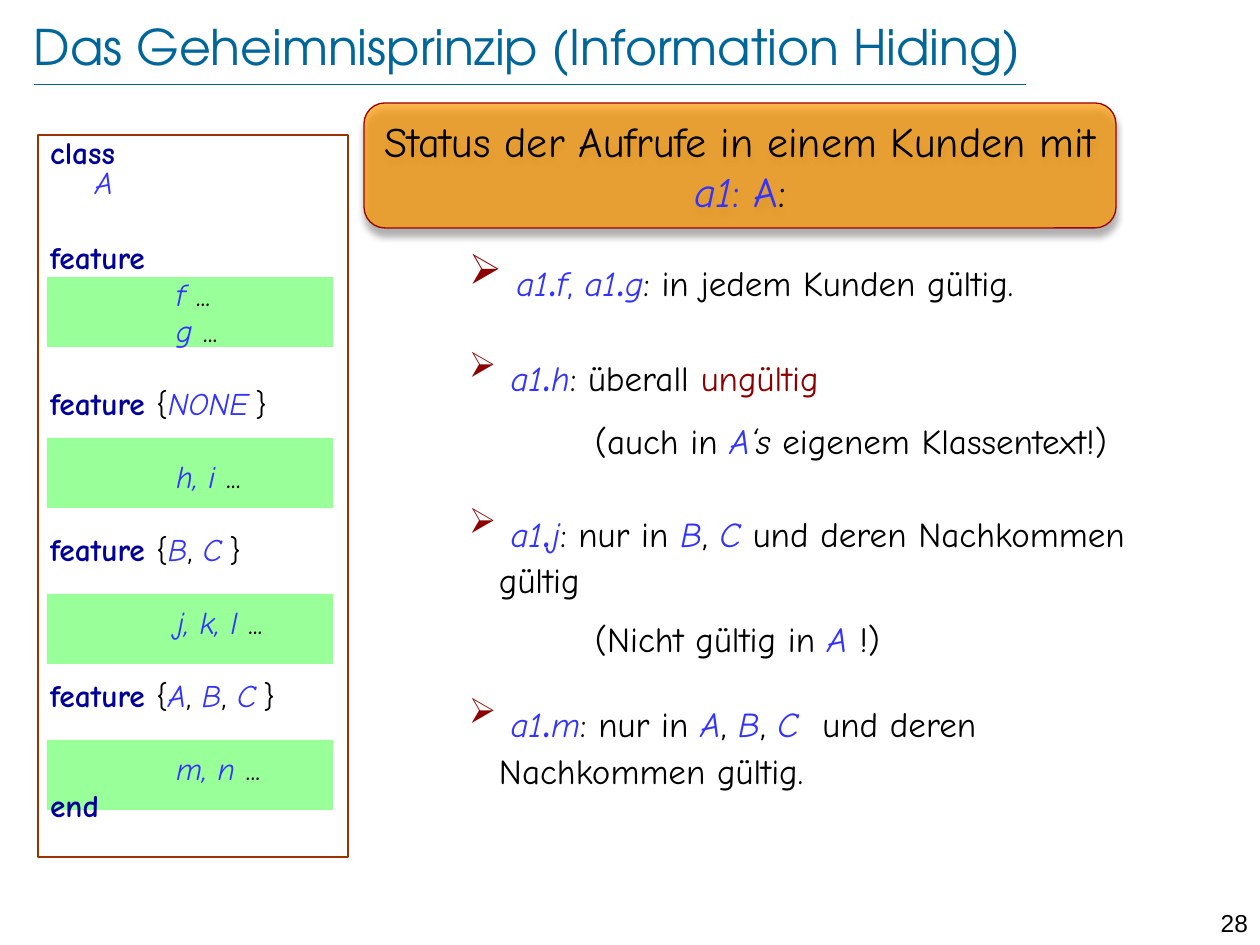
import pptx
import pptx.util
import pptx.dml.color
import pptx.enum.shapes
import pptx.enum.text
import pptx.oxml
import pptx.oxml.ns

PX = 914400 // 126
HUES = dict(ink="000000", blue="3333FF", key="000099", red="8B0000", title="006699",
            frame="993300", green="99FF99", gold="FF9900", edge="990000")
STYLES = {
    "n": {},
    "k": dict(hue="key", bold=True),
    "b": dict(hue="blue", italic=True),
    "u": dict(hue="blue"),
    "d": dict(hue="blue", size=32),
    "r": dict(hue="red"),
    "i": dict(italic=True),
    "t": dict(size=12),
    "L": dict(size=24),
}
KIND = pptx.enum.shapes.MSO_SHAPE
ALIGN = pptx.enum.text.PP_ALIGN
ANCHOR = pptx.enum.text.MSO_ANCHOR


def px(*nums):
    """Turn pixels into EMU."""
    return [n * PX for n in nums]


def rgb(name):
    """Look up a colour."""
    return pptx.dml.color.RGBColor.from_string(HUES[name])


def xml(tag, **atts):
    """Make a drawing element with attributes."""
    node = pptx.oxml.parse_xml(f'<a:{tag} {pptx.oxml.ns.nsdecls("a")}/>')
    for name, val in atts.items():
        node.set(name, str(val))
    return node


def text(para, words, size=18, font="Comic Neue", hue="ink", **form):
    """Add one run of text in the given format."""
    run = para.add_run()
    run.text = words
    run.font.size = pptx.util.Pt(form.get("size", size))
    run.font.name = font
    run.font.color.rgb = rgb(hue)
    run.font.bold = form.get("bold", False)
    run.font.italic = form.get("italic", False)


def fill_para(para, marked, size):
    """Add runs split by bars, each led by its style letter; a slash breaks the line."""
    for part in marked.split("|"):
        if part == "/":
            para.add_line_break()
        else:
            text(para, part[1:], **{"size": size, **STYLES[part[0]]})


def next_para(frame, num, pitch, before):
    """Give the paragraph with this number, spaced by exact pitch."""
    para = frame.add_paragraph() if num else frame.paragraphs[0]
    para.line_spacing = pptx.util.Pt(pitch)
    para.space_before = pptx.util.Pt(before)
    return para


def box(slide, area, insets=(12, 6, 12, 6)):
    """Add a wrapping text box."""
    frame = slide.shapes.add_textbox(*px(*area)).text_frame
    frame.word_wrap = True
    (frame.margin_left, frame.margin_top,
     frame.margin_right, frame.margin_bottom) = px(*insets)
    return frame


def block(slide, kind, area, fill=None, line=None, width=1):
    """Add a preset shape without shadow."""
    shape = slide.shapes.add_shape(kind, *px(*area))
    shape.shadow.inherit = False
    if fill:
        shape.fill.solid()
        shape.fill.fore_color.rgb = rgb(fill)
    else:
        shape.fill.background()
    if line:
        shape.line.color.rgb = rgb(line)
        shape.line.width = pptx.util.Pt(width)
    else:
        shape.line.fill.background()
    return shape


def title(slide, left, top, wide, high):
    """Draw the title and the rule below it."""
    rule = slide.shapes.add_connector(
        pptx.enum.shapes.MSO_CONNECTOR.STRAIGHT,
        *px(left, top + 68, left + 992, top + 68))
    rule.line.color.rgb = rgb("title")
    rule.line.width = pptx.util.Pt(0.25)
    rule._element.spPr.append(xml("effectLst"))
    frame = box(slide, (left, top, wide, high), (0, 0, 0, 0))
    frame.vertical_anchor = ANCHOR.MIDDLE
    text(frame.paragraphs[0], "Das Geheimnisprinzip (Information Hiding)",
         size=28, font="TeX Gyre Adventor", hue="title")


def banner(slide, *area):
    """Draw the rounded heading with its shadow."""
    shape = block(slide, KIND.ROUNDED_RECTANGLE, area, "gold", "edge", 0.75)
    props = shape._element.spPr
    tone = props.find(".//" + pptx.oxml.ns.qn("a:srgbClr"))
    tone.append(xml("alpha", val=70000))
    shade = xml("outerShdw", blurRad=50800, dist=50800, dir=5400000, rotWithShape=0)
    black = xml("srgbClr", val=HUES["ink"])
    black.append(xml("alpha", val=43000))
    shade.append(black)
    props.find(pptx.oxml.ns.qn("a:effectLst")).append(shade)
    frame = shape.text_frame
    frame.word_wrap = True
    frame.margin_left = frame.margin_right = 0
    frame.vertical_anchor = ANCHOR.MIDDLE
    para = frame.paragraphs[0]
    para.alignment = ALIGN.CENTER
    fill_para(para, "nStatus der Aufrufe in einem Kunden mit|/|ba1|u: A|n:", 24)


def code(slide, left, top, wide, high):
    """Draw the class text over its green bands."""
    for drop in (142, 303, 459, 605):
        block(slide, KIND.RECTANGLE, (left + 9, top + drop, 286, 70), "green")
    block(slide, KIND.RECTANGLE, (left, top, wide, high), line="frame", width=1.5)
    frame = box(slide, (left, top, wide, high))
    near, far = 4, 24.7
    rows = [
        (0, 0, "kclass"),
        (45, 0, "bA"),
        (0, 26, "kfeature"),
        (126, near, "bf|n ..."),
        (126, near, "bg|n ..."),
        (0, far, "kfeature |n{|bNONE|t |n}"),
        (126, far, "bh, i |n..."),
        (0, far, "kfeature |n{|bB|n, |bC|t |n}"),
        (126, far, "bj, k, l |n..."),
        (0, far, "kfeature |n{|bA|n, |bB|n, |bC|t |n}"),
        (126, far, "bm, n|n ..."),
        (0, near, "kend"),
    ]
    for num, (indent, before, marked) in enumerate(rows):
        para = next_para(frame, num, 17, before)
        para._p.get_or_add_pPr().set("marL", str(indent * PX))
        fill_para(para, marked, 18)


def calls(slide, *area):
    """Draw the bullet list of calls."""
    frame = box(slide, area, (13, 34, 12, 6))
    rows = [
        (True, 0, "L |ba1|d.|bf|u, |ba1|d.|bg|n: in jedem Kunden gültig."),
        (True, 30, "n |ba1|d.|bh|n: überall |rungültig"),
        (False, 10, "n(auch in |bA|i‘s|n eigenem Klassentext!)"),
        (True, 31, "n |ba1|d.|bj|n: nur in |bB|n, |bC|n und deren Nachkommen|/|ngültig"),
        (False, 10, "n(Nicht gültig in |bA |n!)"),
        (True, 27, "n |ba1|d.|bm|n: nur in |bA|n, |bB|n, |bC|n  und deren|/|nNachkommen gültig."),
    ]
    for num, (mark, before, marked) in enumerate(rows):
        para = next_para(frame, num, 24, before)
        props = para._p.get_or_add_pPr()
        props.set("marL", str((30 if mark else 126) * PX))
        if mark:
            props.set("indent", str(-30 * PX))
            tone = xml("buClr")
            tone.append(xml("srgbClr", val=HUES["red"]))
            props.append(tone)
            props.append(xml("buChar", char="➢"))
        fill_para(para, marked, 20)


def number(slide, *area):
    """Draw the slide number."""
    para = box(slide, area).paragraphs[0]
    para.alignment = ALIGN.RIGHT
    text(para, "28", size=14, font="Arial")


def main():
    """Build and save the slide."""
    deck = pptx.Presentation()
    deck.slide_width, deck.slide_height = px(1260, 945)
    slide = deck.slides.add_slide(deck.slide_layouts[6])
    title(slide, 34, 16, 1095, 60)
    banner(slide, 364, 103, 752, 125)
    code(slide, 38, 135, 310, 722)
    calls(slide, 456, 232, 766, 607)
    number(slide, 1191, 902, 69, 30)
    deck.save("out.pptx")


if __name__ == "__main__":
    main()
